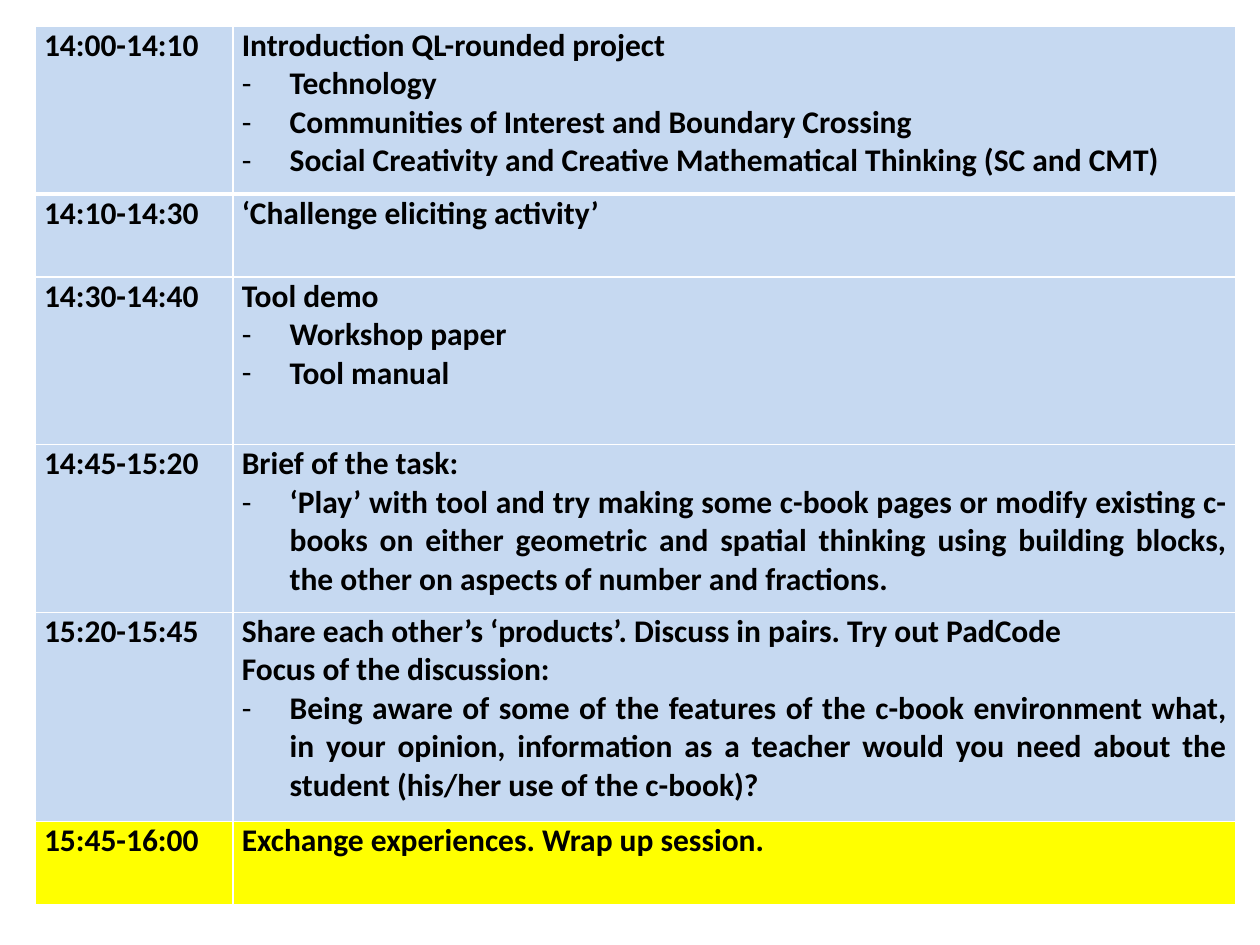
from lxml.etree import SubElement
from pptx import Presentation
from pptx.dml.color import RGBColor
from pptx.enum.text import PP_ALIGN
from pptx.oxml.ns import qn
from pptx.util import Inches, Pt

COLORS = {"text": "000000", "line": "FFFFFF", "plan": "C6D9F1", "close": "FFFF00"}

# Each session: time, row height, fill, lines (a leading "- " marks a bullet)
SESSIONS = [
    ("14:00-14:10", 1.33, "plan", [
        "Introduction QL-rounded project",
        "- Technology",
        "- Communities of Interest and Boundary Crossing",
        "- Social Creativity and Creative Mathematical Thinking (SC and CMT)"]),
    ("14:10-14:30", 0.66, "plan", ["‘Challenge eliciting activity’"]),
    ("14:30-14:40", 1.33, "plan", ["Tool demo", "- Workshop paper", "- Tool manual"]),
    ("14:45-15:20", 1.33, "plan", [
        "Brief of the task:",
        "- ‘Play’ with tool and try making some c-book pages or modify existing "
        "c-books on either geometric and spatial thinking using building blocks, "
        "the other on aspects of number and fractions."]),
    ("15:20-15:45", 1.66, "plan", [
        "Share each other’s ‘products’. Discuss in pairs. Try out PadCode",
        "Focus of the discussion:",
        "- Being aware of some of the features of the c-book environment what, "
        "in your opinion, information as a teacher would you need about the "
        "student (his/her use of the c-book)?"]),
    ("15:45-16:00", 0.66, "close", ["Exchange experiences. Wrap up session."]),
]


def style_cell(cell, fill, top, bottom):
    """Set margins, white borders (top and bottom widths in points) and fill."""
    cell.margin_left = cell.margin_right = Inches(0.07)
    cell.margin_top = cell.margin_bottom = 0
    props = cell._tc.get_or_add_tcPr()
    for side, width in (("L", 1), ("R", 1), ("T", top), ("B", bottom)):
        line = SubElement(props, qn(f"a:ln{side}"), w=str(Pt(width)))
        solid = SubElement(line, qn("a:solidFill"))
        SubElement(solid, qn("a:srgbClr"), val=COLORS["line"])
    cell.fill.solid()
    cell.fill.fore_color.rgb = RGBColor.from_string(COLORS[fill])


def write_lines(cell, lines):
    frame = cell.text_frame
    for i, line in enumerate(lines):
        para = frame.add_paragraph() if i else frame.paragraphs[0]
        para.text = line.removeprefix("- ")
        para.alignment = PP_ALIGN.JUSTIFY
        if line.startswith("- "):
            props = para._p.get_or_add_pPr()
            props.set("marL", str(Inches(0.38)))
            props.set("indent", str(Inches(-0.38)))
            SubElement(props, qn("a:buFont"), typeface="Calibri")
            SubElement(props, qn("a:buChar"), char="-")
        font = para.runs[0].font
        font.name, font.size, font.bold = "Calibri", Pt(18), True
        font.color.rgb = RGBColor.from_string(COLORS["text"])


deck = Presentation()
deck.slide_width, deck.slide_height = Inches(10), Inches(7.5)
slide = deck.slides.add_slide(deck.slide_layouts[6])

height = sum(session[1] for session in SESSIONS)
table = slide.shapes.add_table(len(SESSIONS), 2, Inches(0.28), Inches(0.21),
                               Inches(9.53), Inches(height)).table
table.first_row = table.horz_banding = False
table.columns[0].width = Inches(1.57)
table.columns[1].width = Inches(7.96)

for i, (time, height, fill, lines) in enumerate(SESSIONS):
    table.rows[i].height = Inches(height)
    top, bottom = (3 if i == 1 else 1), (3 if i == 0 else 1)
    for j, content in enumerate(([time], lines)):
        cell = table.cell(i, j)
        style_cell(cell, fill, top, bottom)
        write_lines(cell, content)

deck.save("out.pptx")
